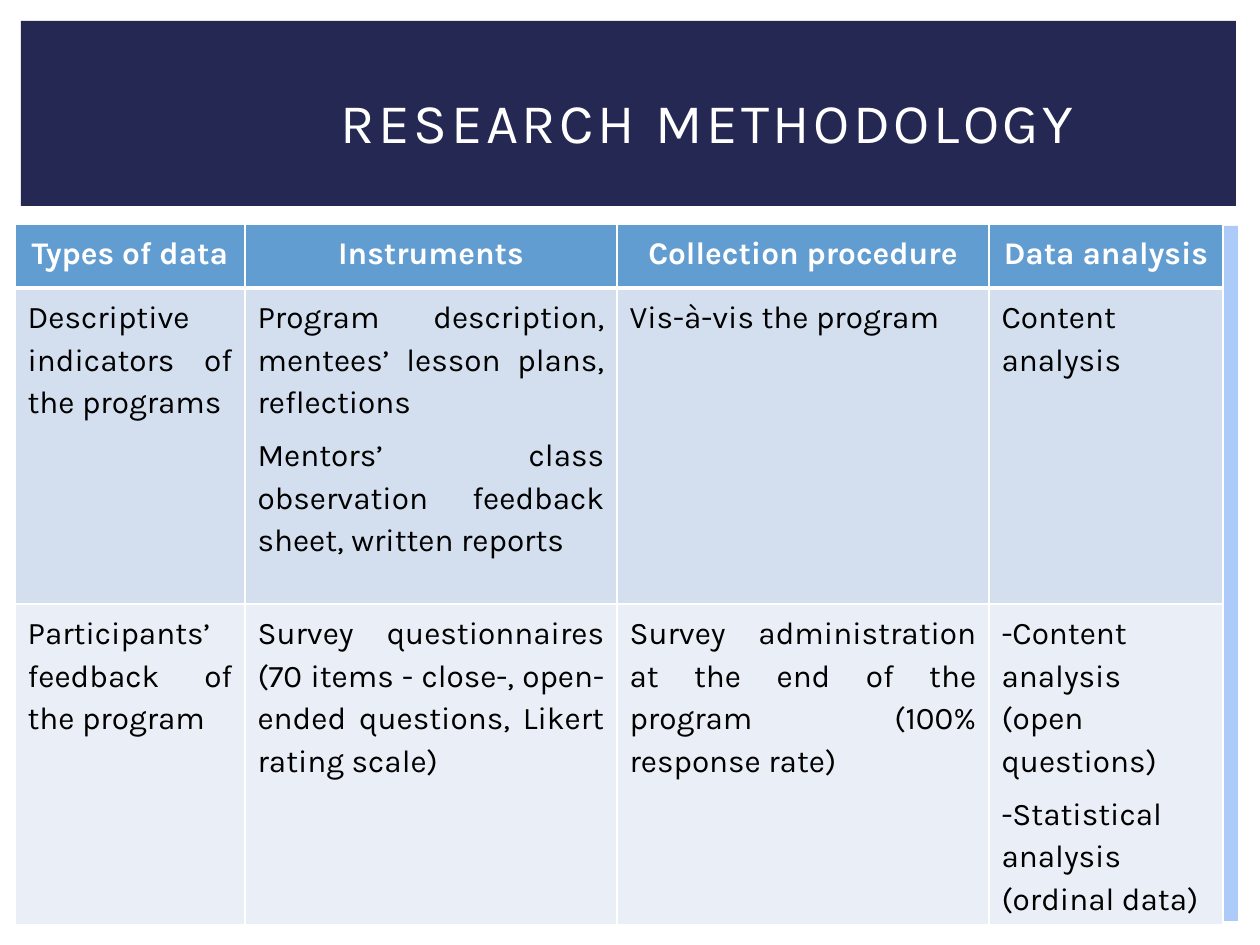
"""Build the research methodology slide: a banner title above a table of data types."""
from lxml import etree
from pptx import Presentation
from pptx.dml.color import RGBColor
from pptx.enum.shapes import MSO_SHAPE
from pptx.enum.text import MSO_ANCHOR, MSO_AUTO_SIZE, PP_ALIGN
from pptx.oxml.ns import qn
from pptx.util import Pt

EMU_PER_PX = 914400 / 126
FONT = "Karla"
WHITE = RGBColor(0xFF, 0xFF, 0xFF)
BLACK = RGBColor(0x00, 0x00, 0x00)
NAVY = RGBColor(0x24, 0x28, 0x52)
PALE_BLUE = RGBColor(0xAC, 0xCB, 0xF9)
HEADER_BLUE = RGBColor(0x62, 0x9D, 0xD1)
BAND_DARK = RGBColor(0xD3, 0xDF, 0xEE)
BAND_LIGHT = RGBColor(0xEA, 0xEF, 0xF7)
RECTANGLE = MSO_SHAPE.RECTANGLE
MIDDLE = MSO_ANCHOR.MIDDLE
NO_AUTOFIT = MSO_AUTO_SIZE.NONE
CENTER, JUSTIFY = PP_ALIGN.CENTER, PP_ALIGN.JUSTIFY


def px(*lengths):
    return [round(length * EMU_PER_PX) for length in lengths]


def add_border(cell, side, width):
    line = etree.SubElement(cell._tc.get_or_add_tcPr(), qn(f"a:{side}"), w=str(Pt(width)))
    fill = etree.SubElement(line, qn("a:solidFill"))
    etree.SubElement(fill, qn("a:srgbClr"), val=str(WHITE))


prs = Presentation()
prs.slide_width, prs.slide_height = px(1260, 945)
slide = prs.slides.add_slide(prs.slide_layouts[5])

for box, color in [((21, 226, 1217, 695), PALE_BLUE), ((21, 21, 1215, 185), NAVY)]:
    panel = slide.shapes.add_shape(RECTANGLE, *px(*box))
    panel.shadow.inherit = False
    panel.fill.solid()
    panel.fill.fore_color.rgb = color
    panel.line.fill.background()

column_widths = [230, 372, 372, 234]
row_heights = [64, 316, 316]
rows = [
    [["Types of data"], ["Instruments"], ["Collection procedure"], ["Data analysis"]],
    [
        ["Descriptive indicators of the programs"],
        ["Program description, mentees’ lesson plans, reflections",
         "Mentors’ class observation feedback sheet, written reports"],
        ["Vis-à-vis the program"],
        ["Content analysis"],
    ],
    [
        ["Participants’ feedback of the program"],
        ["Survey questionnaires (70 items - close-, open-ended questions, Likert rating scale)"],
        ["Survey administration at the end of the program (100% response rate)"],
        ["-Content analysis (open questions)", "-Statistical analysis (ordinal data)"],
    ],
]
row_formats = [
    {"fill": HEADER_BLUE, "color": WHITE, "bold": True, "align": CENTER, "top": 1, "bottom": 3},
    {"fill": BAND_DARK, "color": BLACK, "bold": False, "align": JUSTIFY, "top": 3, "bottom": 1},
    {"fill": BAND_LIGHT, "color": BLACK, "bold": False, "align": JUSTIFY, "top": 1, "bottom": 1},
]

methods = slide.shapes.add_table(
    len(rows), len(column_widths), *px(15, 224, sum(column_widths), sum(row_heights))
).table
for column, width in zip(methods.columns, px(*column_widths)):
    column.width = width
for row, height in zip(methods.rows, px(*row_heights)):
    row.height = height

for row, contents, style in zip(methods.rows, rows, row_formats):
    for cell, paragraphs in zip(row.cells, contents):
        borders = {"lnL": 1, "lnR": 1, "lnT": style["top"], "lnB": style["bottom"]}
        for side, width in borders.items():
            add_border(cell, side, width)
        cell.fill.solid()
        cell.fill.fore_color.rgb = style["fill"]
        cell.text = "\n".join(paragraphs)
        for paragraph in cell.text_frame.paragraphs:
            paragraph.alignment = style["align"]
            paragraph.line_spacing = 1.15
            paragraph.space_before = Pt(6)
            font = paragraph.runs[0].font
            for name, value in {"name": FONT, "size": Pt(18), "bold": style["bold"]}.items():
                setattr(font, name, value)
            font.color.rgb = style["color"]

title = slide.shapes.title
title.left, title.top, title.width, title.height = px(208, 49, 999, 145)
slide.shapes._spTree.append(title._element)
heading = title.text_frame
heading.text = "RESEARCH METHODOLOGY"
heading.auto_size = NO_AUTOFIT
heading.vertical_anchor = MIDDLE
heading.paragraphs[0].alignment = CENTER
heading_font = heading.paragraphs[0].runs[0].font
heading_font.name = FONT
heading_font.size = Pt(32)
heading_font.color.rgb = WHITE
heading_font._element.set("spc", "200")

prs.save("out.pptx")
